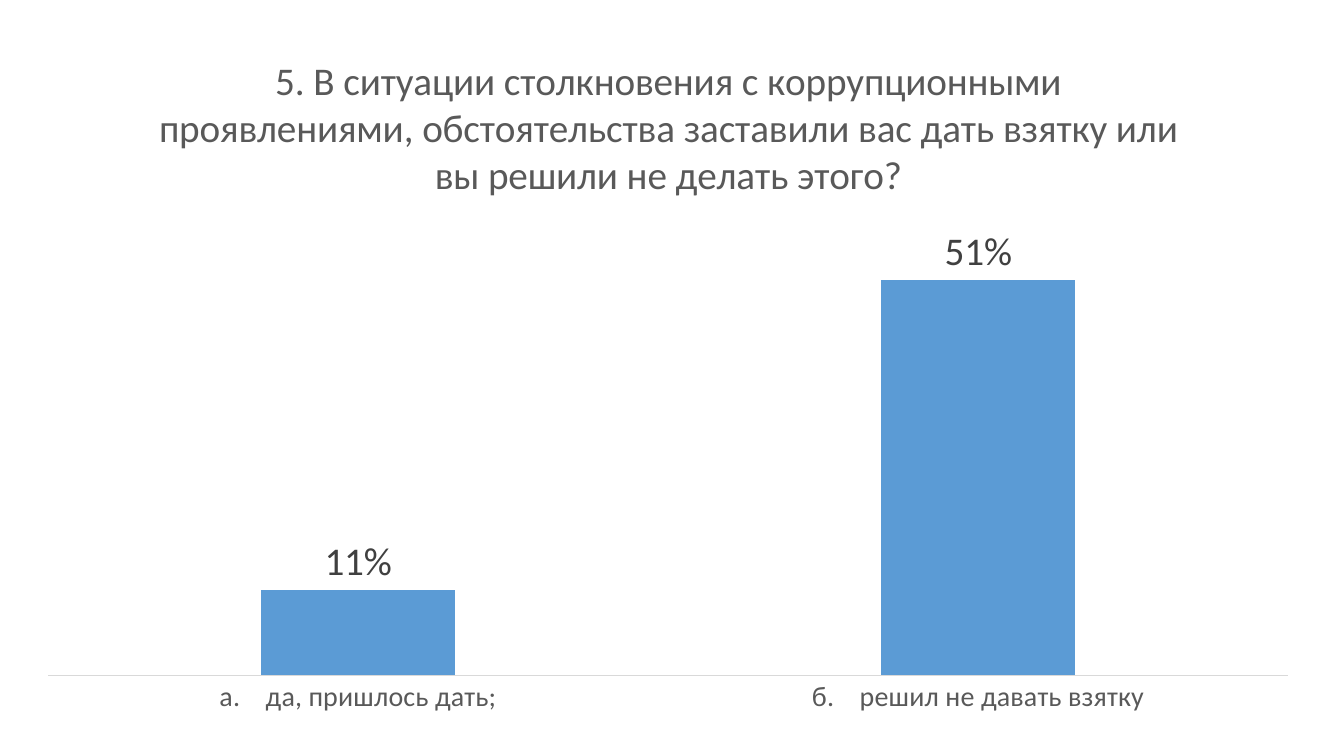
"""Build a slide with a column chart of answers to a survey question."""
from dataclasses import dataclass

from lxml import etree
from pptx import Presentation
from pptx import util as u
from pptx.chart.chart import Chart
from pptx.chart.data import CategoryChartData
from pptx.dml.color import RGBColor
from pptx.enum import chart as charts
from pptx.oxml import ns
from pptx.text.text import Font

FONT = "Calibri"
QUESTION = (
    "5. В ситуации столкновения с коррупционными проявлениями, "
    "обстоятельства заставили вас дать взятку или вы решили не делать этого?"
)


@dataclass(frozen=True)
class Answer:
    label: str
    share: float


ANSWERS = [
    Answer("а.    да, пришлось дать;", 0.11),
    Answer("б.    решил не давать взятку", 0.51),
]


def colour(value: str) -> RGBColor:
    return RGBColor.from_string(value)


def style_font(font: Font, size: float, shade: str) -> None:
    font.name = FONT
    font.size = u.Pt(size)
    font.bold = False
    font.color.rgb = colour(shade)


def place_plot(chart: Chart, **fractions: float) -> None:
    plot_area = chart.plots[0]._element.getparent()
    for old in plot_area.findall(ns.qn("c:layout")):
        plot_area.remove(old)
    layout = etree.Element(ns.qn("c:layout"))
    manual = etree.SubElement(layout, ns.qn("c:manualLayout"))
    settings = {"layoutTarget": "inner", "xMode": "edge", "yMode": "edge", **fractions}
    for tag, value in settings.items():
        etree.SubElement(manual, ns.qn(f"c:{tag}")).set("val", str(value))
    plot_area.insert(0, layout)


def add_title(chart: Chart) -> None:
    chart.has_title = True
    para = chart.chart_title.text_frame.paragraphs[0]
    span = para.add_run()
    span.text = QUESTION
    style_font(span.font, 28, "595959")
    chart.chart_title.include_in_layout = False


def style_axes(chart: Chart) -> None:
    answer_axis = chart.category_axis
    answer_axis.major_tick_mark = charts.XL_TICK_MARK.NONE
    answer_axis.has_major_gridlines = False
    answer_axis.format.line.color.rgb = colour("D9D9D9")
    answer_axis.format.line.width = u.Pt(0.75)
    style_font(answer_axis.tick_labels.font, 20, "595959")
    share_axis = chart.value_axis
    share_axis.minimum_scale = 0
    share_axis.maximum_scale = 0.6
    share_axis.has_major_gridlines = False
    share_axis.visible = False


def style_columns(chart: Chart) -> None:
    plot = chart.plots[0]
    plot.gap_width = 219
    plot.overlap = -27
    plot.vary_by_categories = False
    fill = plot.series[0].format.fill
    fill.solid()
    fill.fore_color.rgb = colour("5B9BD5")
    plot.has_data_labels = True
    labels = plot.data_labels
    labels.show_value = True
    labels.number_format = "0%"
    labels.number_format_is_linked = False
    labels.position = charts.XL_LABEL_POSITION.OUTSIDE_END
    style_font(labels.font, 28, "404040")


def main() -> None:
    deck = Presentation()
    deck.slide_width, deck.slide_height = u.Cm(33.87), u.Cm(19.05)
    page = deck.slides.add_slide(deck.slide_layouts[6])
    data = CategoryChartData(number_format="0%")
    data.categories = [answer.label for answer in ANSWERS]
    data.add_series("Series 1", [answer.share for answer in ANSWERS])
    frame = page.shapes.add_chart(
        charts.XL_CHART_TYPE.COLUMN_CLUSTERED,
        u.Cm(0.56), u.Cm(0.69), u.Cm(32.56), u.Cm(17.75), data,
    )
    chart = frame.chart
    chart.has_legend = False
    style_font(chart.font, 10, "000000")
    add_title(chart)
    style_axes(chart)
    style_columns(chart)
    place_plot(chart, x=0.02, y=0.26, w=0.96, h=0.66)
    deck.save("out.pptx")


if __name__ == "__main__":
    main()
